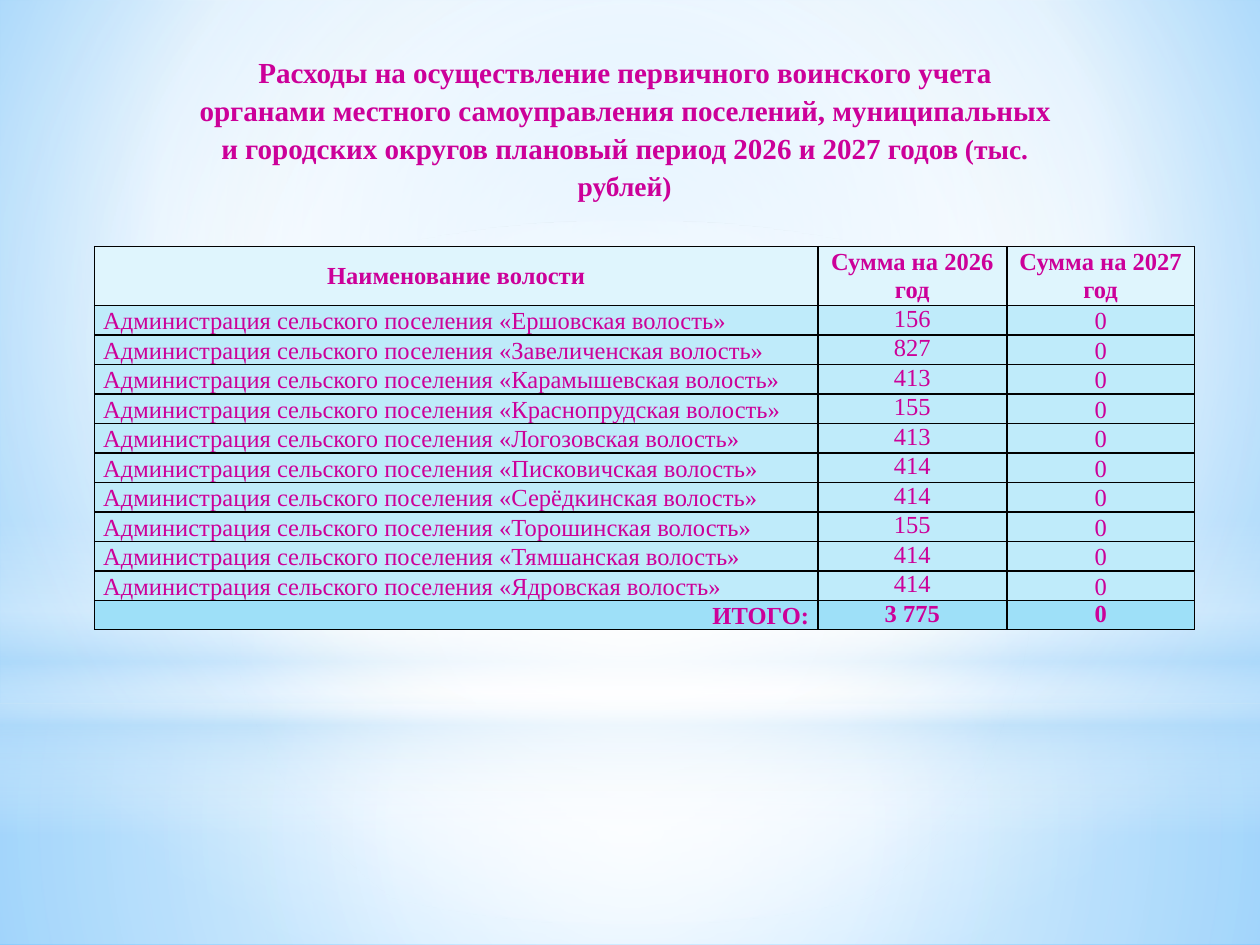
from dataclasses import dataclass

from lxml import etree
from pptx import Presentation
from pptx.dml.color import RGBColor
from pptx.enum.shapes import MSO_SHAPE
from pptx.enum.text import MSO_ANCHOR, PP_ALIGN
from pptx.oxml.ns import qn
from pptx.util import Pt

RECTANGLE, OVAL = MSO_SHAPE.RECTANGLE, MSO_SHAPE.OVAL
LEFT, CENTER, RIGHT = PP_ALIGN.LEFT, PP_ALIGN.CENTER, PP_ALIGN.RIGHT
TOP, MIDDLE, BOTTOM = MSO_ANCHOR.TOP, MSO_ANCHOR.MIDDLE, MSO_ANCHOR.BOTTOM

FONT = "Times New Roman"
MAGENTA, BLACK = "CC0099", "000000"
HEADER_FILL, BODY_FILL, TOTAL_FILL = "DFF5FD", "BFEBFA", "9EE0F8"
WHITE, SKY = "FFFFFF", "B4DCFA"
MIDPOINT = (50, 50, 50, 50)


@dataclass
class Gradient:
    stops: list[tuple[int, str, int]]  # position %, colour, opacity %
    focus: tuple[int, int, int, int] | None = None  # None: top to bottom


@dataclass
class Glow:
    preset: int
    top: float
    height: float
    gradient: Gradient


@dataclass
class CellStyle:
    fill: str
    bold: bool
    alignments: tuple
    anchors: tuple


BACKGROUND = Gradient([(0, "9ED5FF", 100), (60, WHITE, 100), (100, "5BB9FF", 100)],
                      (20, 10, 20, 60))
GLOWS = [
    Glow(RECTANGLE, 402, 138,
         Gradient([(0, WHITE, 91), (37, WHITE, 76), (100, SKY, 79)], MIDPOINT)),
    Glow(RECTANGLE, 0, 402,
         Gradient([(0, WHITE, 89), (48, WHITE, 62), (100, SKY, 79)], MIDPOINT)),
    Glow(RECTANGLE, 297, 180,
         Gradient([(0, WHITE, 0), (29, WHITE, 30), (45, SKY, 40),
                   (55, WHITE, 26), (65, SKY, 60), (100, WHITE, 0)])),
    Glow(OVAL, 126, 402, Gradient([(0, WHITE, 100), (56, WHITE, 0)], MIDPOINT)),
]

TITLE_RUNS = [
    ("Расходы на осуществление первичного воинского учета органами местного "
     "самоуправления поселений, муниципальных и городских округов плановый "
     "период 2026 и 2027 годов ", 16.6),
    ("(тыс. рублей)", 15.7),
]
HEADER = ("Наименование волости", "Сумма на 2026 год", "Сумма на 2027 год")
AMOUNTS = {
    "Ершовская": 156, "Завеличенская": 827, "Карамышевская": 413,
    "Краснопрудская": 155, "Логозовская": 413, "Писковичская": 414,
    "Серёдкинская": 414, "Торошинская": 155, "Тямшанская": 414, "Ядровская": 414,
}
TOTAL = ("ИТОГО:", "3 775", "0")
COLUMN_WIDTHS = (413.3, 108, 107.3)
HEADER_HEIGHT, ROW_HEIGHT = 31, 15.5

HEADER_STYLE = CellStyle(HEADER_FILL, True, (CENTER,) * 3, (MIDDLE,) * 3)
BODY_STYLE = CellStyle(BODY_FILL, False, (LEFT, CENTER, CENTER), (BOTTOM, TOP, BOTTOM))
TOTAL_STYLE = CellStyle(TOTAL_FILL, True, (RIGHT, CENTER, CENTER), (BOTTOM, TOP, TOP))


def rgb(color: str) -> RGBColor:
    return RGBColor.from_string(color)


def set_gradient(fill, owner, gradient: Gradient) -> None:
    """Fill owner's gradient element with the given stops and direction."""
    fill.gradient()
    element = next(owner.iter(qn("a:gradFill")))
    for child in list(element):
        element.remove(child)
    stop_list = etree.SubElement(element, qn("a:gsLst"))
    for position, color, opacity in gradient.stops:
        stop = etree.SubElement(stop_list, qn("a:gs"), pos=str(position * 1000))
        value = etree.SubElement(stop, qn("a:srgbClr"), val=color)
        if opacity < 100:
            etree.SubElement(value, qn("a:alpha"), val=str(opacity * 1000))
    if gradient.focus is None:
        etree.SubElement(element, qn("a:lin"), ang="5400000", scaled="0")
    else:
        radial = etree.SubElement(element, qn("a:path"), {"path": "circle"})
        edges = {side: str(share * 1000) for side, share in zip("ltrb", gradient.focus)}
        etree.SubElement(radial, qn("a:fillToRect"), edges)


def set_font(paragraph, size: float, bold: bool) -> None:
    font = paragraph.font
    font.name, font.size, font.bold = FONT, Pt(size), bold
    font.color.rgb = rgb(MAGENTA)


def add_glow(slide, glow: Glow) -> None:
    shape = slide.shapes.add_shape(glow.preset, 0, Pt(glow.top), Pt(720), Pt(glow.height))
    shape.shadow.inherit = False
    shape.line.fill.background()
    set_gradient(shape.fill, shape.element, glow.gradient)


def add_title(slide) -> None:
    frame = slide.shapes.add_textbox(Pt(105), Pt(26), Pt(504), Pt(82)).text_frame
    frame.word_wrap = True
    frame.margin_left = frame.margin_right = Pt(6)
    paragraph = frame.paragraphs[0]
    paragraph.alignment = CENTER
    paragraph.line_spacing = 1.09
    set_font(paragraph, TITLE_RUNS[0][1], True)
    for text, size in TITLE_RUNS:
        run = paragraph.add_run()
        run.text = text
        run.font.size = Pt(size)


def add_borders(cell) -> None:
    properties = cell._tc.get_or_add_tcPr()
    for index, side in enumerate(("lnL", "lnR", "lnT", "lnB")):
        line = etree.Element(qn(f"a:{side}"), w=str(Pt(1)))
        solid = etree.SubElement(line, qn("a:solidFill"))
        etree.SubElement(solid, qn("a:srgbClr"), val=BLACK)
        properties.insert(index, line)


def fill_row(row, texts: tuple, style: CellStyle) -> None:
    for cell, text, alignment, anchor in zip(row.cells, texts, style.alignments, style.anchors):
        cell.text = text
        cell.vertical_anchor = anchor
        cell.margin_left = cell.margin_right = Pt(5)
        cell.margin_top = cell.margin_bottom = 0
        cell.fill.solid()
        cell.fill.fore_color.rgb = rgb(style.fill)
        paragraph = cell.text_frame.paragraphs[0]
        paragraph.alignment = alignment
        set_font(paragraph, 14, style.bold)
        add_borders(cell)


def add_amounts_table(slide) -> None:
    rows = [(HEADER, HEADER_STYLE)]
    rows += [((f"Администрация сельского поселения «{name} волость»", str(amount), "0"),
              BODY_STYLE) for name, amount in AMOUNTS.items()]
    rows.append((TOTAL, TOTAL_STYLE))
    height = HEADER_HEIGHT + ROW_HEIGHT * (len(rows) - 1)
    table = slide.shapes.add_table(len(rows), len(HEADER), Pt(54), Pt(141),
                                   Pt(sum(COLUMN_WIDTHS)), Pt(height)).table
    table.first_row = table.horz_banding = False
    for column, width in zip(table.columns, COLUMN_WIDTHS):
        column.width = Pt(width)
    for index, (texts, style) in enumerate(rows):
        table.rows[index].height = Pt(ROW_HEIGHT if index else HEADER_HEIGHT)
        fill_row(table.rows[index], texts, style)


def main() -> None:
    presentation = Presentation()
    presentation.slide_width, presentation.slide_height = Pt(720), Pt(540)
    slide = presentation.slides.add_slide(presentation.slide_layouts[6])

    # Backdrop
    set_gradient(slide.background.fill, slide.element, BACKGROUND)
    for glow in GLOWS:
        add_glow(slide, glow)

    # Content
    add_title(slide)
    add_amounts_table(slide)
    presentation.save("out.pptx")


if __name__ == "__main__":
    main()
